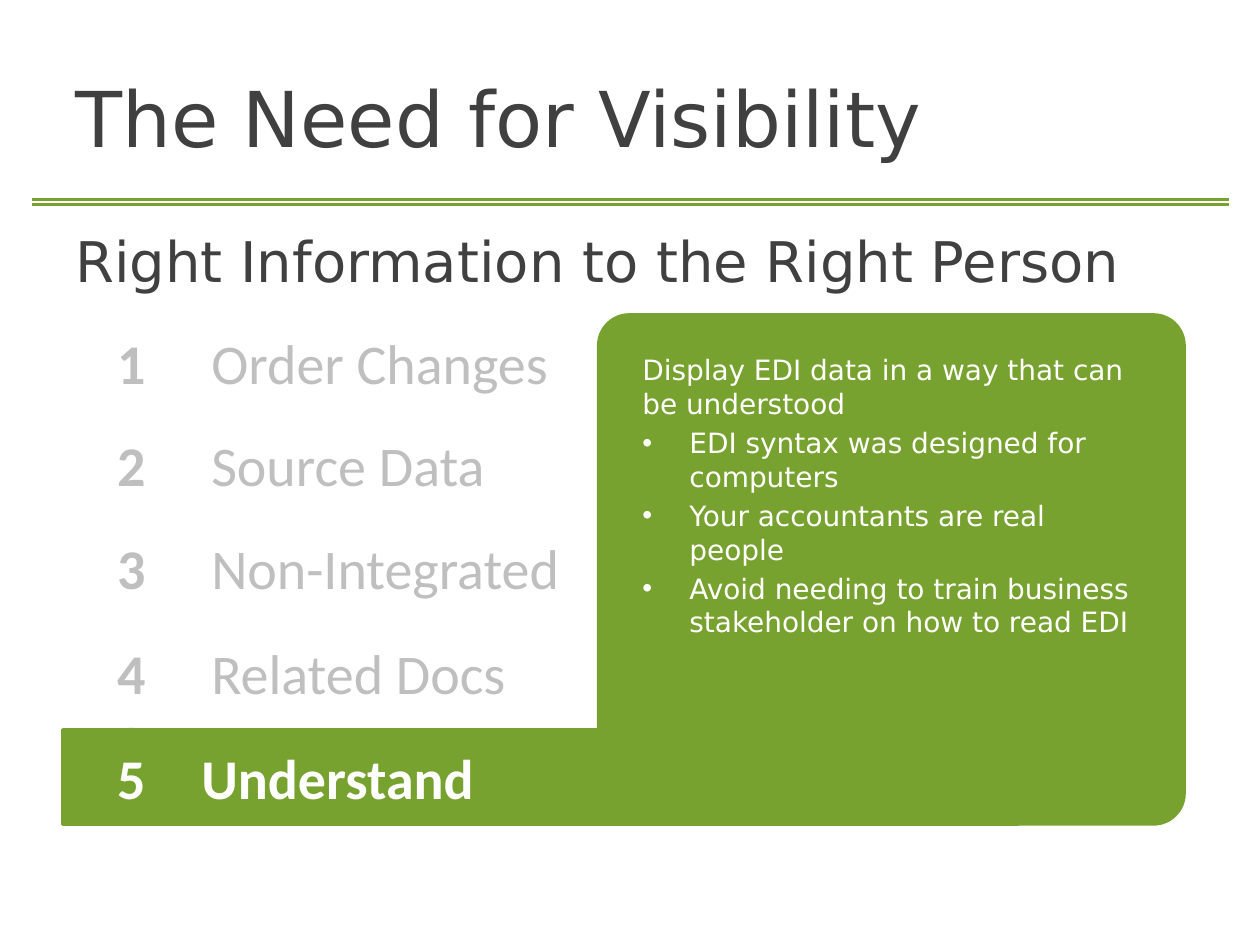
from lxml import etree
from pptx import Presentation
from pptx.dml.color import RGBColor
from pptx.enum.shapes import MSO_CONNECTOR, MSO_SHAPE
from pptx.enum.text import MSO_ANCHOR, PP_ALIGN
from pptx.oxml.ns import qn
from pptx.util import Cm, Pt

STRAIGHT = MSO_CONNECTOR.STRAIGHT
RECT, ROUNDED, OVAL = MSO_SHAPE.RECTANGLE, MSO_SHAPE.ROUNDED_RECTANGLE, MSO_SHAPE.OVAL
TOP, MIDDLE = MSO_ANCHOR.TOP, MSO_ANCHOR.MIDDLE
LEFT, CENTER = PP_ALIGN.LEFT, PP_ALIGN.CENTER
GREEN, WHITE, DARK, GREY = "78A22F", "FFFFFF", "404040", "BFBFBF"

TITLE_FONT = {"name": "DejaVu Sans", "size": Pt(44), "bold": False}
SUBTITLE_FONT = {**TITLE_FONT, "size": Pt(32)}
DETAIL_FONT = {**TITLE_FONT, "size": Pt(16)}
TOPIC_FONT = {"name": "Calibri", "size": Pt(32), "bold": False}
STRONG_FONT = {**TOPIC_FONT, "bold": True}

TOPICS = [
    ("Order Changes", 0),
    ("Source Data", 2.06),
    ("Non-Integrated", 4.13),
    ("Related Docs", 6.25),
    ("Understand", 8.36),
]
INTRO = "Display EDI data in a way that can be understood"
REASONS = [
    "EDI syntax was designed for computers",
    "Your accountants are real people",
    "Avoid needing to train business stakeholder on how to read EDI",
]


def color(hex_value):
    return RGBColor.from_string(hex_value)


def apply(target, values):
    for name, value in values.items():
        setattr(target, name, value)


def write(paragraph, text, font, hex_value, align=LEFT):
    paragraph.alignment = align
    run = paragraph.add_run()
    run.text = text
    apply(run.font, font)
    run.font.color.rgb = color(hex_value)


def add_block(slide, kind, box, fill=None, line_width=2):
    block = slide.shapes.add_shape(kind, *map(Cm, box))
    block.shadow.inherit = False
    if fill:
        block.fill.solid()
        block.fill.fore_color.rgb = color(fill)
        block.line.color.rgb = color(fill)
        block.line.width = Pt(line_width)
    else:
        block.fill.background()
        block.line.fill.background()
    return block


def add_label(slide, box, text, font, hex_value, anchor=MIDDLE):
    label = slide.shapes.add_textbox(*map(Cm, box))
    apply(label.text_frame, {"word_wrap": True, "vertical_anchor": anchor})
    write(label.text_frame.paragraphs[0], text, font, hex_value)


def add_double_rule(slide, box):
    left, top, width, height = box
    for y in (top, top + height):
        rule = slide.shapes.add_connector(
            STRAIGHT, Cm(left), Cm(y), Cm(left + width), Cm(y))
        rule.line.color.rgb = color(GREEN)
        rule.line.width = Pt(1.5)
        etree.SubElement(rule._element.spPr, qn("a:effectLst"))


def add_heading(slide, box):
    left, top, width, height = box
    add_label(slide, box, "The Need for Visibility", TITLE_FONT, DARK)
    add_label(slide, (left, top + 3.68, width + 1.07, 4.45),
              "Right Information to the Right Person", SUBTITLE_FONT, DARK, TOP)


def add_topics(slide, box):
    left, top, width, height = box
    last = len(TOPICS)
    for number, (topic, offset) in enumerate(TOPICS, 1):
        y = top + offset
        active = number == last
        ink = WHITE if active else GREY
        if not active:
            add_label(slide, (left + 2.74, y, width - 2.74, height),
                      topic, TOPIC_FONT, ink)
        badge = add_block(slide, OVAL, (left + 0.43, y, height, height),
                          GREEN if active else None)
        apply(badge.text_frame, {"word_wrap": True, "vertical_anchor": MIDDLE})
        write(badge.text_frame.paragraphs[0], str(number), STRONG_FONT, ink, CENTER)


def add_active_bar(slide, box):
    bar = add_block(slide, RECT, box, GREEN)
    apply(bar.text_frame, {"word_wrap": True, "vertical_anchor": MIDDLE})
    paragraph = bar.text_frame.paragraphs[0]
    tabs = etree.SubElement(paragraph._p.get_or_add_pPr(), qn("a:tabLst"))
    etree.SubElement(tabs, qn("a:tab"), pos=str(Cm(2.54)), algn="l")
    write(paragraph, "\t" + TOPICS[-1][0], STRONG_FONT, WHITE)


def add_panel(slide, box):
    panel = add_block(slide, ROUNDED, box, GREEN)
    panel.adjustments[0] = 0.06


def add_details(slide, box):
    left, top, width, height = box
    details = add_block(slide, RECT, (left + 0.63, top + 0.64, width - 1.21, height - 0.74),
                        GREEN, 0.75)
    frame = details.text_frame
    apply(frame, {"word_wrap": True, "vertical_anchor": TOP})
    write(frame.paragraphs[0], INTRO, DETAIL_FONT, WHITE)
    for reason in REASONS:
        paragraph = frame.add_paragraph()
        paragraph.space_before = Pt(3.2)
        properties = paragraph._p.get_or_add_pPr()
        properties.set("marL", str(Cm(0.95)))
        properties.set("indent", str(-Cm(0.95)))
        etree.SubElement(properties, qn("a:buFont"), typeface="Arial")
        etree.SubElement(properties, qn("a:buChar"), char="•")
        write(paragraph, reason, DETAIL_FONT, WHITE)


def main():
    deck = Presentation()
    apply(deck, {"slide_width": Cm(25.4), "slide_height": Cm(19.05)})
    slide = deck.slides.add_slide(deck.slide_layouts[6])
    panel_box = (12.07, 6.35, 11.8, 10.26)
    add_double_rule(slide, (0.64, 4.02, 24.13, 0.1))
    add_active_bar(slide, (1.27, 14.71, 19.25, 1.9))
    add_panel(slide, panel_box)
    add_heading(slide, (1.27, 0.76, 22.86, 3.18))
    add_topics(slide, (1.27, 6.35, 19.25, 1.9))
    add_details(slide, panel_box)
    deck.save("out.pptx")


if __name__ == "__main__":
    main()
